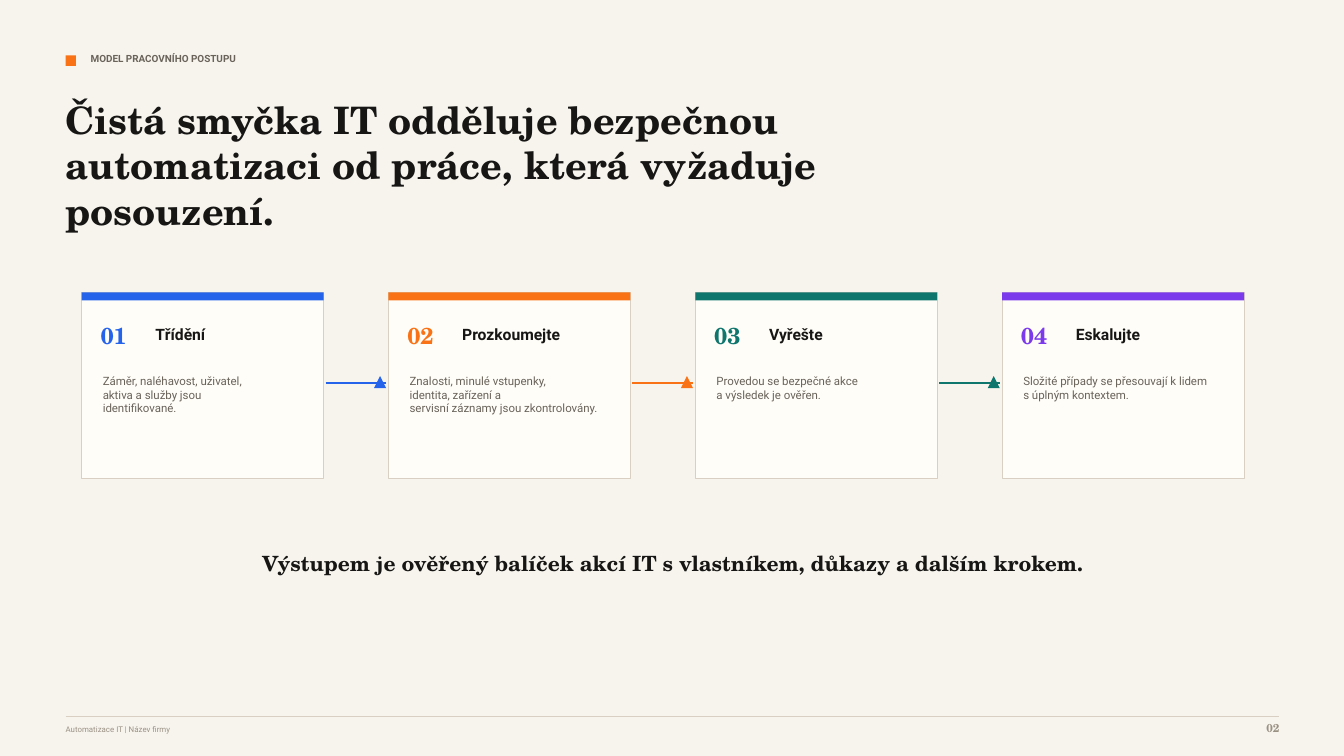
from lxml.etree import SubElement
from pptx import Presentation
from pptx.dml.color import RGBColor
from pptx.enum.shapes import MSO_CONNECTOR as LINE, MSO_SHAPE as SHAPE
from pptx.enum.text import PP_ALIGN as ALIGN
from pptx.oxml.ns import qn
from pptx.util import Inches, Pt

WIDTH, HEIGHT = Inches(13.33), Inches(7.5)
COLUMN, ROW = WIDTH / 100, HEIGHT / 100
LEFT, CONTENT_W = 4.88, 90.32
CARDS, CARD_PITCH = (6.08, 38.67, 18, 24.67), 22.83

COLORS = {
    "paper": "F7F4EE", "card": "FFFDF8", "border": "D9D0C3",
    "ink": "171614", "body": "69635A", "muted": "9A9184",
    "blue": "2563EB", "orange": "F97316", "green": "0F766E", "violet": "7C3AED",
}
SERIF, SANS = "TeX Gyre Schola", "Roboto"
FORMATS = {
    "kicker": {"size": Pt(7.1), "name": SANS, "bold": True},
    "title": {"size": Pt(27), "name": SERIF, "bold": True},
    "number": {"size": Pt(16.5), "name": SERIF, "bold": True},
    "step": {"size": Pt(11.2), "name": SANS, "bold": True},
    "detail": {"size": Pt(8.2), "name": SANS, "bold": False},
    "outcome": {"size": Pt(15), "name": SERIF, "bold": True},
    "source": {"size": Pt(5.6), "name": SANS, "bold": False},
    "page": {"size": Pt(8.2), "name": SERIF, "bold": True},
}
STEPS = [
    ("Třídění", "blue",
     ["Záměr, naléhavost, uživatel,", "aktiva a služby jsou", "identifikované."]),
    ("Prozkoumejte", "orange",
     ["Znalosti, minulé vstupenky,", "identita, zařízení a",
      "servisní záznamy jsou zkontrolovány."]),
    ("Vyřešte", "green", ["Provedou se bezpečné akce", "a výsledek je ověřen."]),
    ("Eskalujte", "violet",
     ["Složité případy se přesouvají k lidem", "s úplným kontextem."]),
]


def rgb(name):
    """Return the named colour."""
    return RGBColor.from_string(COLORS[name])


def place(x, y, w, h):
    """Turn grid columns and rows into slide lengths."""
    return [round(n) for n in (x * COLUMN, y * ROW, w * COLUMN, h * ROW)]


def add_block(s, box, fill, line=None, kind=SHAPE.RECTANGLE):
    """Add a flat filled shape with an optional thin border."""
    sp = s.shapes.add_shape(kind, *place(*box))
    sp.shadow.inherit = False
    sp.fill.solid()
    sp.fill.fore_color.rgb = rgb(fill)
    if line:
        sp.line.color.rgb = rgb(line)
        sp.line.width = Pt(0.75)
    else:
        sp.line.fill.background()


def add_line(s, x, y, w, color, weight):
    """Add a horizontal line without a shadow."""
    left, top, width, _ = place(x, y, w, 0)
    sp = s.shapes.add_connector(LINE.STRAIGHT, left, top, left + width, top)
    sp.line.color.rgb = rgb(color)
    sp.line.width = Pt(weight)
    SubElement(sp._element.spPr, qn("a:effectLst"))


def add_text(s, box, lines, style, color, align=ALIGN.LEFT):
    """Add a text box without margins, one paragraph a line."""
    tf = s.shapes.add_textbox(*place(*box)).text_frame
    tf.word_wrap = True
    for side in ("left", "top", "right", "bottom"):
        setattr(tf, f"margin_{side}", 0)
    for i, line in enumerate(lines):
        p = tf.add_paragraph() if i else tf.paragraphs[0]
        p.alignment = align
        r = p.add_run()
        r.text = line
        r.font.color.rgb = rgb(color)
        for key, value in FORMATS[style].items():
            setattr(r.font, key, value)


def add_header(s, x, y, w):
    """Add the marker, the section label and the headline."""
    add_block(s, (x, y, 0.78, 1.4), "orange")
    add_text(s, (x + 1.87, y - 0.4, w / 2, 2.53),
             ["MODEL PRACOVNÍHO POSTUPU"], "kicker", "body")
    add_text(s, (x, y + 5.47, 70.37, 14.4),
             ["Čistá smyčka IT odděluje bezpečnou automatizaci od práce, "
              "která vyžaduje posouzení."], "title", "ink")


def add_card(s, box, number, name, color, details):
    """Add one step card with its coloured top edge."""
    x, y, w, h = box
    add_block(s, box, "card", "border")
    add_block(s, (x, y, w, 1.07), color)
    add_text(s, (x + 1.4, y + 3.87, 3.45, 3.87), [f"{number:02}"], "number", color)
    add_text(s, (x + 5.48, y + 4.27, 10, 2.8), [name], "step", "ink")
    add_text(s, (x + 1.57, y + 10.8, 14.4, 9.47), details, "detail", "body")


def add_arrow(s, x, y, w, color):
    """Add the shaft between two cards and the triangle at its end."""
    add_line(s, x, y, w, color, 1.75)
    add_block(s, (x + w - 0.9, y - 0.93, 0.9, 1.6), color, kind=SHAPE.ISOSCELES_TRIANGLE)


def add_steps(s, x, y, w, h):
    """Add the row of cards, with an arrow after all but the last."""
    for i, (name, color, details) in enumerate(STEPS):
        left = x + i * CARD_PITCH
        add_card(s, (left, y, w, h), i + 1, name, color, details)
        if i < len(STEPS) - 1:
            add_arrow(s, left + w + 0.15, y + 12, 4.5, color)


def add_footer(s, x, y, w):
    """Add the rule, the source and the page number."""
    add_line(s, x, y, w, "border", 0.75)
    add_text(s, (x, y + 1.14, 59.4, 2),
             ["Automatizace IT | Název firmy"], "source", "muted")
    add_text(s, (x + w - 3.75, y + 0.6, 3.75, 2.53), ["02"], "page", "muted", ALIGN.RIGHT)


def main():
    """Build and save the slide."""
    prs = Presentation()
    prs.slide_width, prs.slide_height = WIDTH, HEIGHT
    s = prs.slides.add_slide(prs.slide_layouts[6])
    s.background.fill.solid()
    s.background.fill.fore_color.rgb = rgb("paper")
    add_header(s, LEFT, 7.33, CONTENT_W)
    add_steps(s, *CARDS)
    add_text(s, (13.73, 72.8, 72.69, 5.87),
             ["Výstupem je ověřený balíček akcí IT s vlastníkem, důkazy a dalším krokem."],
             "outcome", "ink", ALIGN.CENTER)
    add_footer(s, LEFT, 94.73, CONTENT_W)
    prs.save("out.pptx")


if __name__ == "__main__":
    main()
